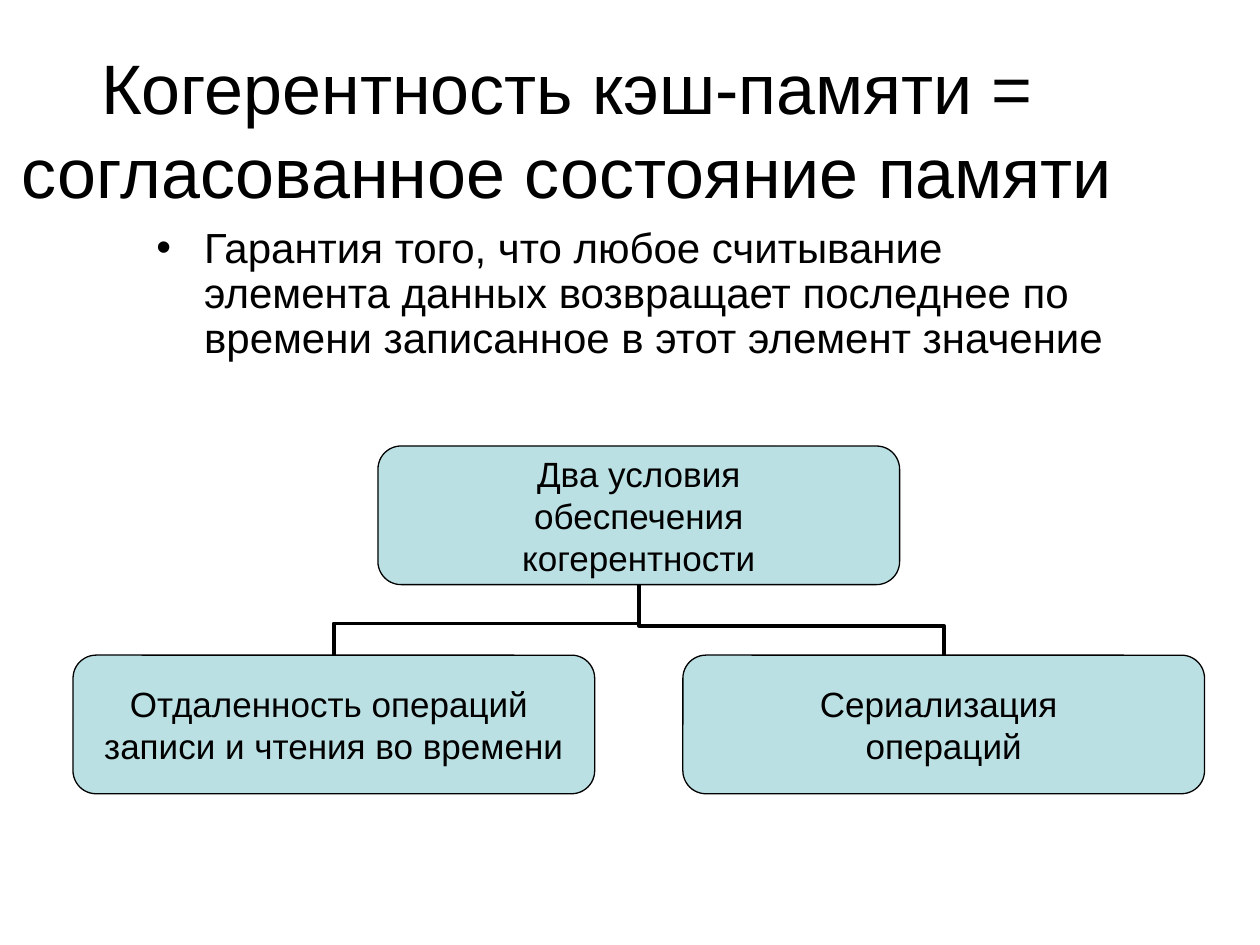
from lxml import etree
from pptx import Presentation
from pptx.dml.color import RGBColor
from pptx.enum.shapes import MSO_CONNECTOR, MSO_SHAPE
from pptx.enum.text import MSO_ANCHOR, MSO_AUTO_SIZE, PP_ALIGN
from pptx.oxml.ns import qn
from pptx.util import Inches, Pt

ELBOW = MSO_CONNECTOR.ELBOW
ROUND = MSO_SHAPE.ROUNDED_RECTANGLE
TOP, MIDDLE = MSO_ANCHOR.TOP, MSO_ANCHOR.MIDDLE
LEFT, CENTER = PP_ALIGN.LEFT, PP_ALIGN.CENTER
FIXED = MSO_AUTO_SIZE.NONE
FONT = "Arial"
COLORS = {"ink": "000000", "node": "BBE0E3", "page": "FFFFFF"}
BOX_W, BOX_H = 4.14, 1.1


def color(name):
    return RGBColor.from_string(COLORS[name])


def write(frame, lines, size, align, anchor):
    frame.word_wrap = True
    frame.auto_size = FIXED
    frame.vertical_anchor = anchor
    for i, line in enumerate(lines):
        para = frame.paragraphs[0] if i == 0 else frame.add_paragraph()
        para.alignment = align
        para.space_before = Pt(0)
        run = para.add_run()
        run.text = line
        run.font.name = FONT
        run.font.size = Pt(size)
        run.font.color.rgb = color("ink")


def place(shape, x, y, w, h):
    shape.left, shape.top = Inches(x), Inches(y)
    shape.width, shape.height = Inches(w), Inches(h)


def add_title(slide, box):
    title = slide.shapes.title
    place(title, *box)
    write(title.text_frame,
          ["Когерентность кэш-памяти = согласованное состояние памяти"],
          40, CENTER, TOP)


def add_body(slide, box):
    body = slide.placeholders[1]
    place(body, *box)
    write(body.text_frame,
          ["Гарантия того, что любое считывание элемента данных возвращает "
           "последнее по времени записанное в этот элемент значение"],
          24, LEFT, TOP)
    para = body.text_frame.paragraphs[0]
    para.line_spacing = 0.9
    props = para._p.get_or_add_pPr()
    props.set("marL", str(Inches(0.38)))
    props.set("indent", str(-Inches(0.38)))
    etree.SubElement(props, qn("a:buFont")).set("typeface", FONT)
    etree.SubElement(props, qn("a:buChar")).set("char", "•")


def add_node(slide, x, y, lines):
    node = slide.shapes.add_shape(ROUND, Inches(x), Inches(y),
                                  Inches(BOX_W), Inches(BOX_H))
    node.shadow.inherit = False
    node.fill.solid()
    node.fill.fore_color.rgb = color("node")
    node.line.color.rgb = color("ink")
    node.line.width = Pt(0.75)
    frame = node.text_frame
    frame.margin_left = frame.margin_right = 0
    frame.margin_top = frame.margin_bottom = 0
    write(frame, lines, 20, CENTER, MIDDLE)
    return node


def add_link(slide, child, root, bend):
    """Join the child's top to the root's bottom, leaving vertically."""
    link = slide.shapes.add_connector(ELBOW, 0, 0, 0, 0)
    link.begin_connect(child, 0)
    link.end_connect(root, 2)
    x1, y1, x2, y2 = link.begin_x, link.begin_y, link.end_x, link.end_y
    right = x1 > x2
    # A quarter turn swaps the sides of the frame about its centre.
    wide, high = abs(x1 - x2), abs(y1 - y2)
    link.left = (x1 + x2 - high) // 2
    link.top = (y1 + y2 - wide) // 2
    link.width, link.height = high, wide
    props = link._element.spPr
    frame = props.find(qn("a:xfrm"))
    frame.set("rot", str((90 if right else 270) * 60000))
    frame.set("flipH", "1" if right else "0")
    frame.set("flipV", "0")
    guides = props.find(qn("a:prstGeom")).get_or_add_avLst()
    guide = etree.SubElement(guides, qn("a:gd"))
    guide.set("name", "adj1")
    guide.set("fmla", f"val {round(bend * 100000)}")
    link.line.color.rgb = color("ink")
    link.line.width = Pt(2.25)
    etree.SubElement(props, qn("a:effectLst"))
    # Links lie behind the nodes.
    root._element.addprevious(link._element)


def add_tree(slide, x, y, w, h):
    root = add_node(slide, x + (w - BOX_W) / 2, y,
                    ["Два условия", "обеспечения", "когерентности"])
    low = y + h - BOX_H
    left = add_node(slide, x, low,
                    ["Отдаленность операций ", "записи и чтения во времени"])
    right = add_node(slide, x + w - BOX_W, low,
                     ["Сериализация ", "операций"])
    add_link(slide, right, root, 0.42)
    add_link(slide, left, root, 0.45)


def main():
    deck = Presentation()
    deck.slide_width, deck.slide_height = Inches(10), Inches(7.5)
    slide = deck.slides.add_slide(deck.slide_layouts[1])
    slide.background.fill.solid()
    slide.background.fill.fore_color.rgb = color("page")
    add_title(slide, (0, 0.3, 9, 1.25))
    add_body(slide, (1.14, 1.75, 7.86, 1.45))
    add_tree(slide, 0.58, 3.54, 8.98, 2.76)
    deck.save("out.pptx")


if __name__ == "__main__":
    main()
